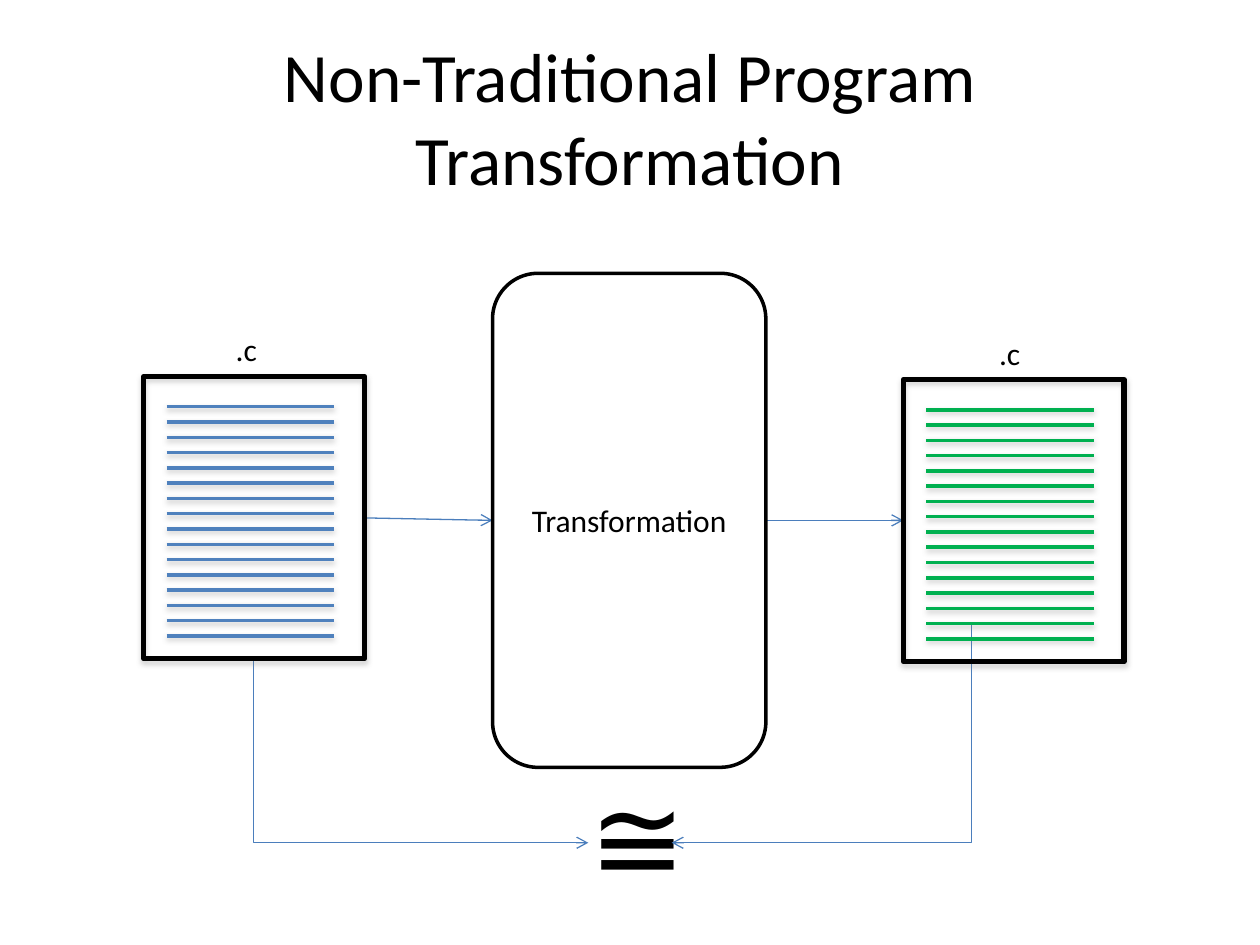
from lxml import etree
from pptx import Presentation
from pptx import util as u
from pptx.dml.color import RGBColor
from pptx.enum import shapes, text
from pptx.oxml import ns

# Content, with all lengths in centimetres
BLACK, ARROW_BLUE = "000000", "4B7EBC"
MIDDLE, TOP = text.MSO_ANCHOR.MIDDLE, text.MSO_ANCHOR.TOP
CENTER, LEFT = text.PP_ALIGN.CENTER, text.PP_ALIGN.LEFT

TITLE = ("Non-Traditional Program Transformation", (1.27, 0.76, 22.86, 3.18), 39.6)
CAPTIONS = [  # words, place, size
    ("≅", (11.63, 15.29, 2.26, 3.07), 66),
    (".c", (4.5, 6.53, 0.94, 1.02), 18),
    (".c", (19.89, 6.6, 0.94, 1.02), 18),
]
STAGE = ("Transformation", (9.93, 5.51, 5.51, 9.96), 18)
FLOWS = [((7.34, 10.44), (9.93, 10.49)), ((15.44, 10.49), (18.21, 10.49))]
COMPARISONS = [((5.11, 13.28), (11.86, 16.99)), ((19.58, 12.57), (13.54, 16.99))]
DOCUMENTS = [(2.9, 7.59, "4F81BD"), (18.21, 7.65, "00B050")]  # left, top, code colour
PAGE_SIZE = (4.45, 5.69)
CODE_INSET, CODE_SIZE, CODE_LINES = (0.46, 0.61), (3.38, 4.62), 16
PAGE_SHADOW = {"alpha": 35, "blur": 3.1, "dist": 1.8}
CODE_SHADOW = {"alpha": 38, "blur": 3.1, "dist": 1.6}


def color(value):
    return RGBColor.from_string(value)


def cm(lengths):
    return [u.Cm(length) for length in lengths]


def set_all(target, values):
    for name, value in values.items():
        setattr(target, name, value)


def set_effects(part, shadow=None):
    properties = part._element.spPr
    for old in properties.findall(ns.qn("a:effectLst")):
        properties.remove(old)
    effects = etree.SubElement(properties, ns.qn("a:effectLst"))
    if shadow:
        outer = etree.SubElement(
            effects, ns.qn("a:outerShdw"), blurRad=str(u.Pt(shadow["blur"])),
            dist=str(u.Pt(shadow["dist"])), dir=str(90 * 60000), rotWithShape="0")
        tint = etree.SubElement(outer, ns.qn("a:srgbClr"), val="808080")
        etree.SubElement(tint, ns.qn("a:alpha"), val=str(shadow["alpha"] * 1000))


def set_line(part, line_color, width):
    part.line.color.rgb = color(line_color)
    part.line.width = u.Pt(width)


def write(part, words, size, wrap=True, anchor=MIDDLE, align=CENTER):
    frame = part.text_frame
    set_all(frame, {"word_wrap": wrap, "vertical_anchor": anchor})
    paragraph = frame.paragraphs[0]
    paragraph.alignment = align
    run = paragraph.add_run()
    run.text = words
    set_all(run.font, {"name": "Calibri", "size": u.Pt(size)})
    run.font.color.rgb = color(BLACK)


def add_line(parent, kind, start, end, line_color, width, shadow=None):
    line = parent.add_connector(kind, *cm((*start, *end)))
    set_line(line, line_color, width)
    set_effects(line, shadow)
    return line


def add_arrow(parent, kind, start, end):
    arrow = add_line(parent, kind, start, end, ARROW_BLUE, 0.75)
    etree.SubElement(arrow.line._get_or_add_ln(), ns.qn("a:tailEnd"), type="arrow")
    return arrow


def add_corner_arrow(parent, start, end):
    """Go straight down from start, then sideways to end."""
    (x1, y1), (x2, y2) = start, end
    rightward = x2 > x1
    # The preset bends across then down, so it is laid out turned by a quarter
    width, height = y2 - y1, abs(x2 - x1)
    left, top = (x1 + x2 - width) / 2, (y1 + y2 - height) / 2
    near, far = (left, left + width)[::-1 if rightward else 1]
    arrow = add_arrow(parent, shapes.MSO_CONNECTOR.ELBOW, (near, top), (far, top + height))
    properties = arrow._element.spPr
    properties.find(ns.qn("a:prstGeom")).set("prst", "bentConnector2")
    properties.find(ns.qn("a:xfrm")).set("rot", str((270 if rightward else 90) * 60000))


def add_document(parent, left, top, code_color):
    document = parent.add_group_shape().shapes
    page = document.add_shape(shapes.MSO_SHAPE.RECTANGLE, *cm((left, top, *PAGE_SIZE)))
    page.fill.background()
    set_line(page, BLACK, 3)
    set_effects(page, PAGE_SHADOW)
    x, first = left + CODE_INSET[0], top + CODE_INSET[1]
    for row in range(CODE_LINES):
        y = first + row * CODE_SIZE[1] / (CODE_LINES - 1)
        add_line(document, shapes.MSO_CONNECTOR.STRAIGHT, (x, y), (x + CODE_SIZE[0], y),
                 code_color, 2, CODE_SHADOW)


def main():
    deck = Presentation()
    set_all(deck, {"slide_width": u.Cm(25.4), "slide_height": u.Cm(19.05)})
    parts = deck.slides.add_slide(deck.slide_layouts[6]).shapes

    # Title
    words, place, size = TITLE
    write(parts.add_textbox(*cm(place)), words, size)

    # Captions and the equivalence sign
    for words, place, size in CAPTIONS:
        write(parts.add_textbox(*cm(place)), words, size, wrap=False, anchor=TOP, align=LEFT)

    # Arrows
    for start, end in FLOWS:
        add_arrow(parts, shapes.MSO_CONNECTOR.STRAIGHT, start, end)
    for start, end in COMPARISONS:
        add_corner_arrow(parts, start, end)

    # Source and result documents
    for document in DOCUMENTS:
        add_document(parts, *document)

    # Transformation stage
    words, place, size = STAGE
    stage = parts.add_shape(shapes.MSO_SHAPE.ROUNDED_RECTANGLE, *cm(place))
    stage.shadow.inherit = False
    stage.fill.solid()
    stage.fill.fore_color.rgb = color("FFFFFF")
    set_line(stage, BLACK, 2)
    write(stage, words, size)

    deck.save("out.pptx")


if __name__ == "__main__":
    main()
